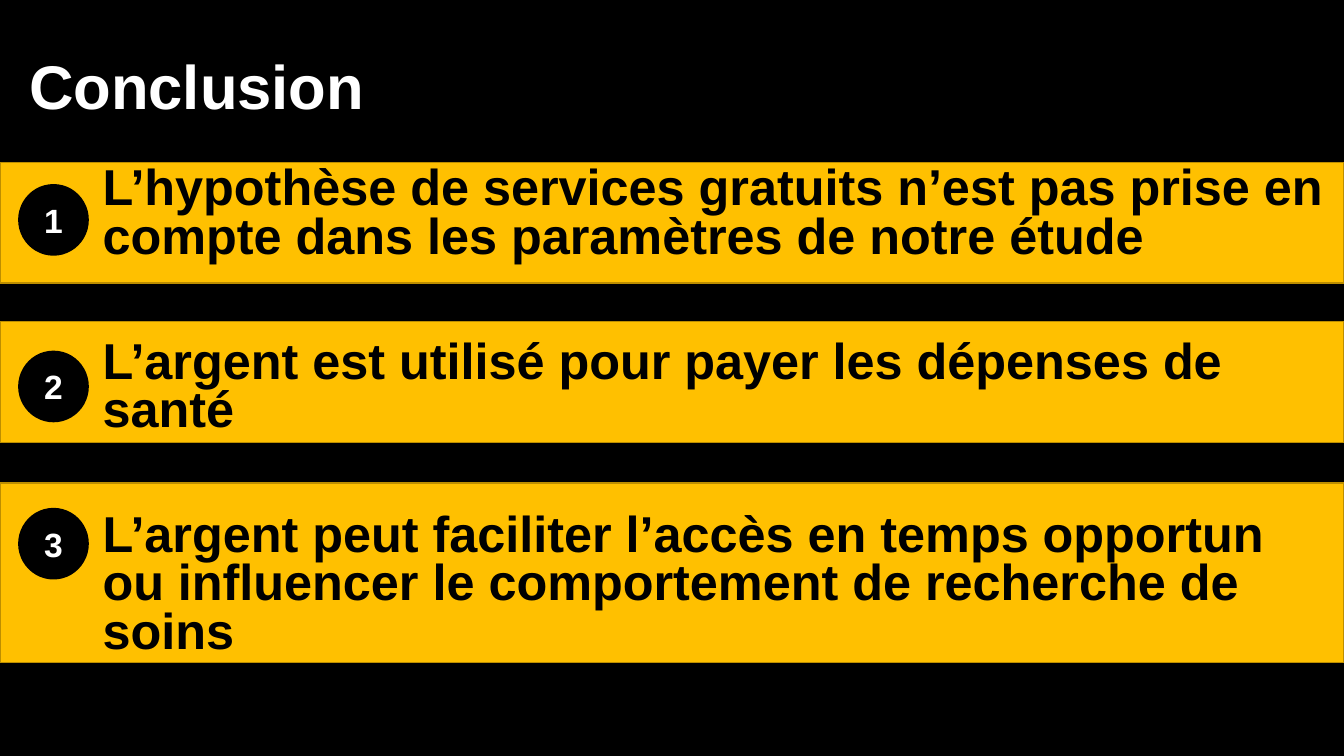
from dataclasses import dataclass

from pptx import Presentation
from pptx.dml.color import RGBColor
from pptx.enum.shapes import MSO_SHAPE
from pptx.enum.text import MSO_ANCHOR, PP_ALIGN
from pptx.util import Pt

BLACK, WHITE, AMBER, AMBER_EDGE = "000000", "FFFFFF", "FFC000", "BD8E00"
SLIDE_W, SLIDE_H = 960, 540
MARGIN = 13.7


@dataclass
class Point:
    text: str
    band_top: float
    band_height: float
    badge_top: float
    space_before: float


POINTS = [
    Point("L’hypothèse de services gratuits n’est pas prise en compte "
          "dans les paramètres de notre étude", 115.9, 86.4, 132.2, 10),
    Point("L’argent est utilisé pour payer les dépenses de santé",
          229.7, 86.4, 251.2, 54.6),
    Point("L’argent peut faciliter l’accès en temps opportun ou influencer "
          "le comportement de recherche de soins", 344.9, 128.2, 363.5, 54.6),
]


def rgb(value: str) -> RGBColor:
    return RGBColor.from_string(value)


def add_run(p, text: str, size: float, color: str) -> None:
    r = p.add_run()
    r.text = text
    r.font.name = "Arial"
    r.font.size = Pt(size)
    r.font.bold = True
    r.font.color.rgb = rgb(color)


def add_box(s, left: float, top: float, width: float, height: float):
    """Add a wrapping text box and return its text frame."""
    box = s.shapes.add_textbox(Pt(left), Pt(top), Pt(width), Pt(height))
    tf = box.text_frame
    tf.word_wrap = True
    return tf


def add_filled(s, kind, left: float, top: float, width: float, height: float,
               fill: str, line: str, line_width: float):
    sp = s.shapes.add_shape(kind, Pt(left), Pt(top), Pt(width), Pt(height))
    sp.shadow.inherit = False
    sp.fill.solid()
    sp.fill.fore_color.rgb = rgb(fill)
    sp.line.color.rgb = rgb(line)
    sp.line.width = Pt(line_width)
    return sp


def add_title(s, text: str) -> None:
    tf = add_box(s, MARGIN, 11.5, 828, 104.4)
    tf.vertical_anchor = MSO_ANCHOR.MIDDLE
    p = tf.paragraphs[0]
    p.line_spacing = 0.9
    add_run(p, text, 44, WHITE)


def add_band(s, point: Point) -> None:
    add_filled(s, MSO_SHAPE.RECTANGLE, 0, point.band_top, SLIDE_W,
               point.band_height, AMBER, AMBER_EDGE, 1)


def add_body(s, points: list[Point]) -> None:
    tf = add_box(s, 66.2, 115.9, 889, 386.6)
    for i, point in enumerate(points):
        p = tf.add_paragraph() if i else tf.paragraphs[0]
        p.line_spacing = 0.8
        p.space_before = Pt(point.space_before)
        add_run(p, point.text, 36, BLACK)


def add_badge(s, number: int, top: float) -> None:
    sp = add_filled(s, MSO_SHAPE.OVAL, MARGIN, top, 49, 49.7,
                    BLACK, BLACK, 1.5)
    tf = sp.text_frame
    tf.vertical_anchor = MSO_ANCHOR.MIDDLE
    p = tf.paragraphs[0]
    p.alignment = PP_ALIGN.CENTER
    add_run(p, str(number), 24, WHITE)


def main() -> None:
    prs = Presentation()
    prs.slide_width, prs.slide_height = Pt(SLIDE_W), Pt(SLIDE_H)
    s = prs.slides.add_slide(prs.slide_layouts[6])
    s.background.fill.solid()
    s.background.fill.fore_color.rgb = rgb(BLACK)

    add_title(s, "Conclusion")
    for point in POINTS:
        add_band(s, point)
    add_body(s, POINTS)
    for number, point in enumerate(POINTS, start=1):
        add_badge(s, number, point.badge_top)
    prs.save("out.pptx")


if __name__ == "__main__":
    main()
